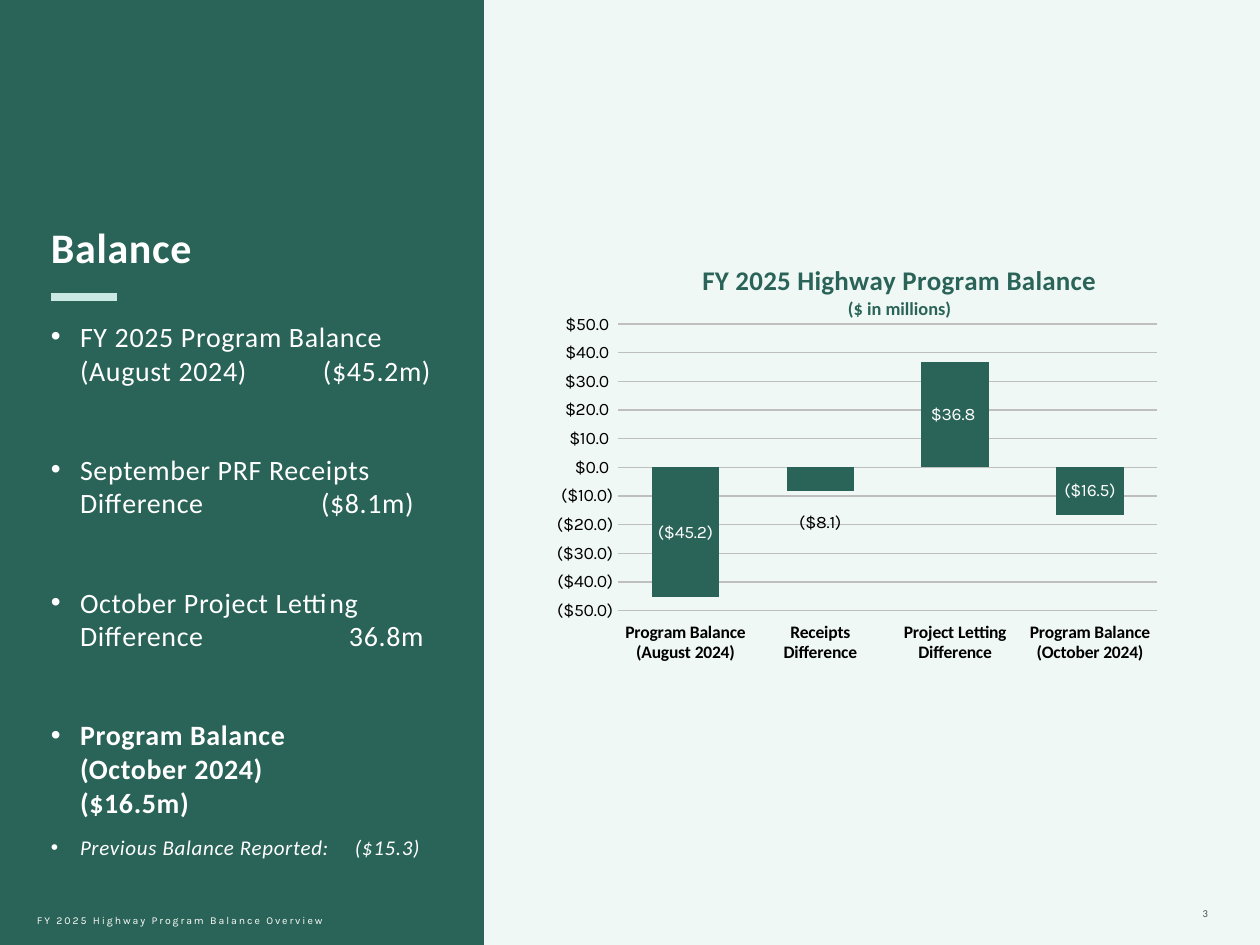
from dataclasses import dataclass

import lxml.etree
import pptx
import pptx.chart.data
import pptx.dml.color
import pptx.enum.chart
import pptx.enum.shapes
import pptx.enum.text
import pptx.oxml
import pptx.oxml.ns
import pptx.util

EMU_PER_PX = 914400 / 126
GREEN, MINT, WHITE, BLACK, GREY = "2A6357", "CBE9E3", "FFFFFF", "000000", "BFBFBF"
MONEY_FORMAT = '"$"#,##0.0_);\\("$"#,##0.0\\)'
HANGING_PX = 29


@dataclass
class TextLine:
    text: str
    size: float
    font: str = "Calibri"
    color: str = WHITE
    bold: bool = False
    italic: bool = False
    spacing: int = 40
    before: float = 0
    after: float = 0
    bullet: bool = False
    tab: int = 0
    align: pptx.enum.text.PP_ALIGN = pptx.enum.text.PP_ALIGN.LEFT


def px(value: int) -> int:
    return round(value * EMU_PER_PX)


def rgb(color: str) -> pptx.dml.color.RGBColor:
    return pptx.dml.color.RGBColor.from_string(color)


def add_child(parent, tag: str, **attributes: str):
    child = lxml.etree.SubElement(parent, pptx.oxml.ns.qn(tag))
    for name, value in attributes.items():
        child.set(name, value)
    return child


def style_font(font, name: str, size: float, color: str, bold: bool = False, italic: bool = False) -> None:
    font.name = name
    font.size = pptx.util.Pt(size)
    font.color.rgb = rgb(color)
    font.bold = bold
    font.italic = italic


def write_line(paragraph, line: TextLine) -> None:
    paragraph.text = line.text
    paragraph.alignment = line.align
    paragraph.space_before = pptx.util.Pt(line.before)
    paragraph.space_after = pptx.util.Pt(line.after)
    properties = paragraph._p.get_or_add_pPr()
    if line.bullet:
        properties.set("marL", str(px(HANGING_PX)))
        properties.set("indent", str(-px(HANGING_PX)))
        add_child(properties, "a:buFont", typeface="Arial")
        add_child(properties, "a:buChar", char="•")
    if line.tab:
        tabs = add_child(properties, "a:tabLst")
        add_child(tabs, "a:tab", pos=str(px(line.tab)), algn="l")
    style_font(paragraph.font, line.font, line.size, line.color, line.bold, line.italic)
    properties.find(pptx.oxml.ns.qn("a:defRPr")).set("spc", str(line.spacing))


def add_text(slide, left: int, top: int, width: int, height: int, lines: list[TextLine],
             anchor=pptx.enum.text.MSO_ANCHOR.TOP) -> None:
    frame = slide.shapes.add_textbox(px(left), px(top), px(width), px(height)).text_frame
    frame.word_wrap = True
    frame.vertical_anchor = anchor
    frame.margin_left = frame.margin_right = frame.margin_top = frame.margin_bottom = 0
    for index, line in enumerate(lines):
        write_line(frame.add_paragraph() if index else frame.paragraphs[0], line)


def manual_layout(x: float, y: float, width: float = 0, height: float = 0, edge: bool = True):
    layout = pptx.oxml.parse_xml(f'<c:layout {pptx.oxml.ns.nsdecls("c")}/>')
    manual = add_child(layout, "c:manualLayout")
    if width:
        add_child(manual, "c:layoutTarget", val="inner")
    if edge:
        add_child(manual, "c:xMode", val="edge")
        add_child(manual, "c:yMode", val="edge")
    for tag, value in (("c:x", x), ("c:y", y), ("c:w", width), ("c:h", height)):
        if value or tag in ("c:x", "c:y"):
            add_child(manual, tag, val=str(value))
    return layout


def set_layout(parent, layout, after: str = "") -> None:
    for existing in parent.findall(pptx.oxml.ns.qn("c:layout")):
        parent.remove(existing)
    position = parent.index(parent.find(pptx.oxml.ns.qn(after))) + 1 if after else 0
    parent.insert(position, layout)


def style_axes(chart) -> None:
    categories, values = chart.category_axis, chart.value_axis
    for axis, font, bold in ((categories, "Calibri", True), (values, "Karla", False)):
        axis.major_tick_mark = axis.minor_tick_mark = pptx.enum.chart.XL_TICK_MARK.NONE
        style_font(axis.tick_labels.font, font, 10, BLACK, bold)
    categories.tick_label_position = pptx.enum.chart.XL_TICK_LABEL_POSITION.LOW
    values.minimum_scale, values.maximum_scale, values.major_unit = -50, 50, 10
    values.tick_labels.number_format = MONEY_FORMAT
    values.tick_labels.number_format_is_linked = False
    values.format.line.fill.background()
    for line in (categories.format.line, values.major_gridlines.format.line):
        line.color.rgb = rgb(GREY)
        line.width = pptx.util.Pt(0.75)


def style_labels(series) -> None:
    labels = series.data_labels
    labels.show_value = True
    labels.number_format = MONEY_FORMAT
    labels.number_format_is_linked = False
    labels.position = pptx.enum.chart.XL_LABEL_POSITION.CENTER
    style_font(labels.font, "Karla", 10, WHITE)
    receipts_label = series.points[1].data_label
    style_font(receipts_label.font, "Karla", 10, BLACK)
    receipts_label.position = pptx.enum.chart.XL_LABEL_POSITION.OUTSIDE_END
    element = labels._element.find(pptx.oxml.ns.qn("c:dLbl"))
    set_layout(element, manual_layout(0, 0.04, edge=False), "c:idx")
    number_format = add_child(element, "c:numFmt", formatCode=MONEY_FORMAT, sourceLinked="0")
    element.insert(2, number_format)
    for leader_lines in labels._element.findall(pptx.oxml.ns.qn("c:showLeaderLines")):
        leader_lines.set("val", "0")


def add_balance_chart(slide) -> None:
    data = pptx.chart.data.CategoryChartData(number_format=MONEY_FORMAT)
    data.categories = ["Program Balance (August 2024)", "Receipts Difference",
                       "Project Letting Difference", "Program Balance (October 2024)"]
    data.add_series("Series 1", (-45.2, -8.1, 36.8, -16.5))
    chart = slide.shapes.add_chart(pptx.enum.chart.XL_CHART_TYPE.COLUMN_CLUSTERED,
                                   px(556), px(258), px(620), px(441), data).chart
    chart.has_legend = False
    style_font(chart.font, "Karla", 10, BLACK)
    title = chart.chart_title.text_frame
    for index, (text, size) in enumerate((("FY 2025 Highway Program Balance", 15.4), ("($ in millions)", 10.5))):
        paragraph = title.add_paragraph() if index else title.paragraphs[0]
        paragraph.text = text
        style_font(paragraph.font, "Calibri", size, GREEN, True)
    set_layout(chart.chart_title._element, manual_layout(0.23, 0), "c:tx")
    set_layout(chart._chartSpace.chart.plotArea, manual_layout(0.1, 0.15, 0.87, 0.65))
    plot = chart.plots[0]
    plot.gap_width, plot.overlap, plot.vary_by_categories = 100, -24, False
    series = plot.series[0]
    series.invert_if_negative = False
    series.format.fill.solid()
    series.format.fill.fore_color.rgb = rgb(GREEN)
    style_axes(chart)
    style_labels(series)


def main() -> None:
    presentation = pptx.Presentation()
    presentation.slide_width, presentation.slide_height = px(1260), px(945)
    slide = presentation.slides.add_slide(presentation.slide_layouts[6])
    slide.background.fill.solid()
    slide.background.fill.fore_color.rgb = rgb("F0F8F6")

    panel = slide.shapes.add_shape(pptx.enum.shapes.MSO_SHAPE.RECTANGLE, 0, 0, px(484), px(945))
    panel.shadow.inherit = False
    panel.fill.solid()
    panel.fill.fore_color.rgb = rgb(GREEN)
    panel.line.fill.background()

    add_text(slide, 1086, 894, 122, 38, [
        TextLine("3", 6, color="4D4D4F", spacing=110, align=pptx.enum.text.PP_ALIGN.RIGHT)],
        pptx.enum.text.MSO_ANCHOR.MIDDLE)
    add_balance_chart(slide)

    gap = 37.5
    add_text(slide, 51, 222, 384, 643, [
        TextLine("Balance", 24, bold=True, after=18),
        TextLine("FY 2025 Program Balance (August 2024)\t($45.2m)", 16, before=9, bullet=True, tab=272),
        TextLine("September PRF Receipts Difference\t($8.1m)", 16, before=gap, bullet=True, tab=270),
        TextLine("October Project Letting Difference\t36.8m", 16, before=gap, bullet=True, tab=298),
        TextLine("Program Balance\v(October 2024)\v($16.5m)", 16, bold=True, before=gap, bullet=True),
        TextLine("Previous Balance Reported:\t($15.3)", 12, italic=True, before=9, bullet=True, tab=304)])

    rule = slide.shapes.add_connector(pptx.enum.shapes.MSO_CONNECTOR.STRAIGHT, px(51), px(297), px(117), px(297))
    rule.line.color.rgb = rgb(MINT)
    rule.line.width = pptx.util.Pt(4.5)
    add_child(rule._element.spPr, "a:effectLst")

    add_text(slide, 37, 901, 329, 38, [
        TextLine("FY 2025 Highway Program Balance Overview", 6, font="Karla", spacing=110)],
        pptx.enum.text.MSO_ANCHOR.MIDDLE)
    presentation.save("out.pptx")


if __name__ == "__main__":
    main()
